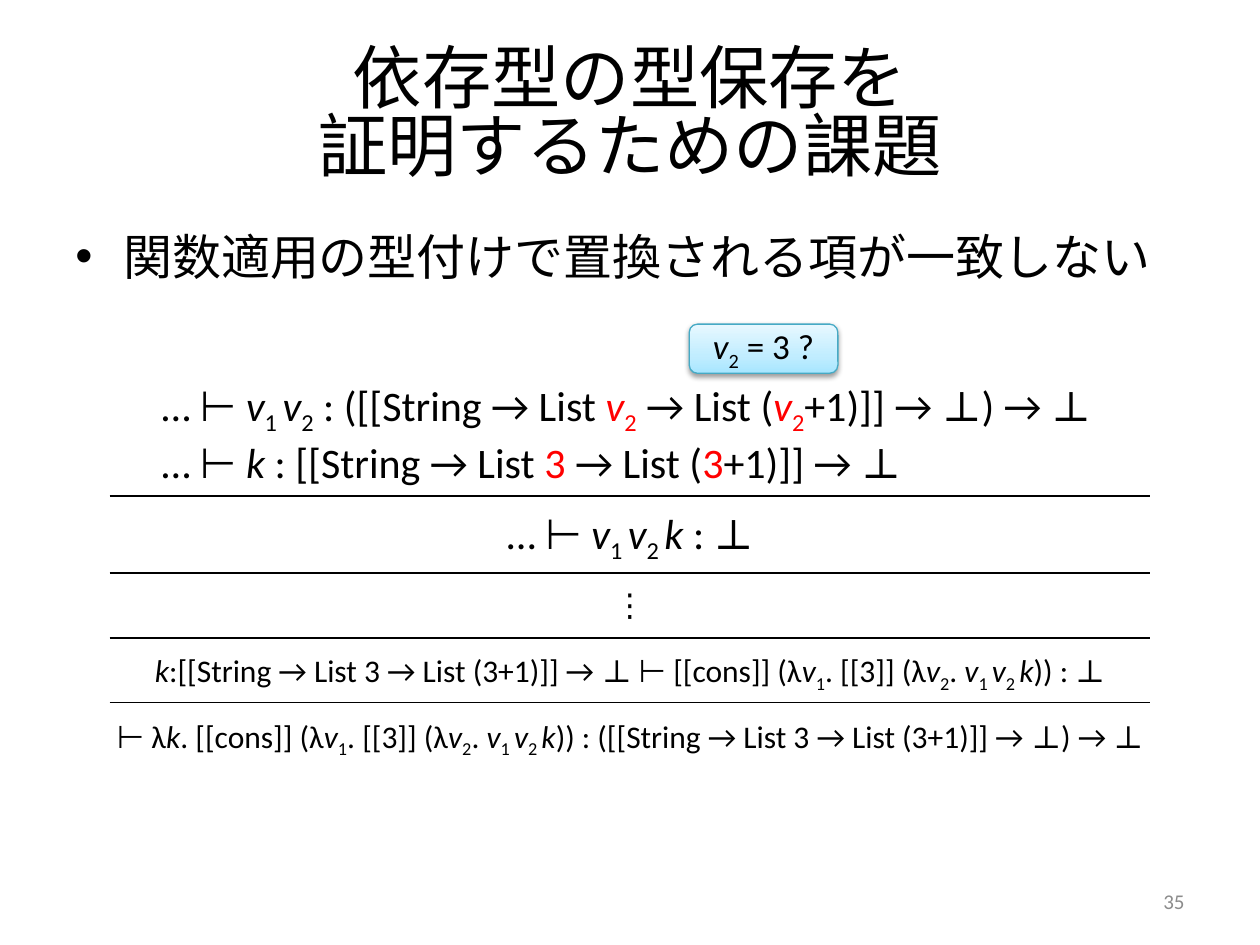
from dataclasses import dataclass
from itertools import groupby

from lxml.etree import SubElement
from pptx import Presentation
from pptx.dml.color import RGBColor as RGB
from pptx.enum.shapes import MSO_CONNECTOR as CONN, MSO_SHAPE as SHAPE
from pptx.enum.text import MSO_ANCHOR as ANCHOR, PP_ALIGN as ALIGN
from pptx.oxml import parse_xml
from pptx.oxml.ns import nsdecls, qn
from pptx.util import Inches, Pt


@dataclass(frozen=True)
class Theme:
    font: str = "Calibri"
    symbol_font: str = "Cambria"
    ink: RGB = RGB(0, 0, 0)
    accent: RGB = RGB(255, 0, 0)
    muted: RGB = RGB(0x8C, 0x8C, 0x8C)
    callout_line: RGB = RGB(0x46, 0xAA, 0xC5)
    callout_stops: tuple = ((0, "A7E6FF"), (35, "C1EDFF"), (100, "E7F8FF"))
    title: float = 39.6
    body: float = 28
    rule: float = 24
    callout: float = 20
    small_rule: float = 18
    number: float = 12


T = Theme()
W, H = Inches(10), Inches(7.5)
MARGIN = 0.05  # share of the slide width

# Judgements: v and k are variables, a digit after v is its index,
# and text between asterisks is highlighted.
PREMISES = ("… ⊢ v1 v2 : ([[String → List *v2* → List (*v2*+1)]] → ⊥) → ⊥",
            "… ⊢ k : [[String → List *3* → List (*3*+1)]] → ⊥")
# (text, size, top, left, width), the last three as shares of the tree's box
STEPS = (
    ("… ⊢ v1 v2 k : ⊥", T.rule, 0.33, 0.01, 0.98),
    ("⋮", T.small_rule, 0.53, 0.4, 0.2),
    ("k:[[String → List 3 → List (3+1)]] → ⊥ ⊢ [[cons]] (λv1. [[3]] (λv2. v1 v2 k)) : ⊥",
     T.small_rule, 0.7, 0, 1),
    ("⊢ λk. [[cons]] (λv1. [[3]] (λv2. v1 v2 k)) : ([[String → List 3 → List (3+1)]] → ⊥) → ⊥",
     T.small_rule, 0.87, -0.025, 1.05),
)
RULE_LINES = (0.316, 0.515, 0.684, 0.85)


def share(box, left, top, width, height):
    x, y, w, h = box
    return tuple(int(v) for v in (x + left * w, y + top * h, width * w, height * h))


def add_run(p, text, size, color=T.ink, font=T.font):
    r = p.add_run()
    r.text = text
    r.font.size, r.font.name = Pt(size), font
    r.font.color.rgb = color
    return r


def judgement_styles(text):
    """Yield each character with its (italic, subscript, symbol, highlighted) style."""
    red = sub = False
    prev = ""
    for i, ch in enumerate(text):
        if ch == "*":
            red = not red
            continue
        sub = (ch.isdigit() and prev == "v") or (
            ch == " " and sub and text[i + 1] in "vk")
        yield ch, (ch in "vk", sub, ch == "⊥", red)
        prev = ch


def add_judgement(p, text, size):
    for style, chars in groupby(judgement_styles(text), key=lambda c: c[1]):
        italic, sub, symbol, red = style
        r = add_run(p, "".join(ch for ch, _ in chars), size,
                    T.accent if red else T.ink, T.symbol_font if symbol else T.font)
        r.font.italic = italic
        if sub:
            r._r.get_or_add_rPr().set("baseline", "-25000")


def add_text_box(slide, box, align=ALIGN.LEFT, anchor=ANCHOR.TOP):
    tf = slide.shapes.add_textbox(*box).text_frame
    tf.word_wrap, tf.vertical_anchor = True, anchor
    tf.paragraphs[0].alignment = align
    return tf


def add_title(slide, box, lines):
    sp = slide.shapes.title
    sp.left, sp.top, sp.width, sp.height = box
    tf = sp.text_frame
    tf.vertical_anchor = ANCHOR.MIDDLE
    p = tf.paragraphs[0]
    p.alignment, p.line_spacing = ALIGN.CENTER, 0.82
    for i, line in enumerate(lines):
        if i:
            p.add_line_break()
        add_run(p, line, T.title)


def add_bullet(slide, box, text):
    p = add_text_box(slide, box).paragraphs[0]
    p.space_before = Pt(0.2 * T.body)
    pPr = p._p.get_or_add_pPr()
    indent = Inches(0.38)
    pPr.set("marL", str(indent))
    pPr.set("indent", str(-indent))
    SubElement(pPr, qn("a:buFont"), typeface="Arial")
    SubElement(pPr, qn("a:buChar"), char="•")
    add_run(p, text, T.body)


def add_rule_line(slide, box, top):
    x, y, w, _ = share(box, 0, top, 1, 0)
    ln = slide.shapes.add_connector(CONN.STRAIGHT, x, y, x + w, y)
    ln.line.color.rgb, ln.line.width = T.ink, Pt(1)
    SubElement(ln._element.spPr, qn("a:effectLst"))


def add_derivation(slide, box):
    tf = add_text_box(slide, share(box, 0.038, 0, 0.924, 0.296))
    for i, premise in enumerate(PREMISES):
        p = tf.add_paragraph() if i else tf.paragraphs[0]
        add_judgement(p, premise, T.rule)
    for text, size, top, left, width in STEPS:
        tf = add_text_box(slide, share(box, left, top, width, 0.13), ALIGN.CENTER)
        add_judgement(tf.paragraphs[0], text, size)
    for top in RULE_LINES:
        add_rule_line(slide, box, top)


def add_callout(slide, box, text):
    sp = slide.shapes.add_shape(SHAPE.ROUNDED_RECTANGLE, *box)
    sp.line.color.rgb, sp.line.width = T.callout_line, Pt(0.75)
    stops = "".join(f'<a:gs pos="{pos * 1000}"><a:srgbClr val="{color}"/></a:gs>'
                    for pos, color in T.callout_stops)
    spPr = sp._element.spPr
    spPr.find(qn("a:ln")).addprevious(parse_xml(
        f'<a:gradFill {nsdecls("a")} rotWithShape="1"><a:gsLst>{stops}</a:gsLst>'
        '<a:lin ang="16200000" scaled="0"/></a:gradFill>'))
    spPr.append(parse_xml(
        f'<a:effectLst {nsdecls("a")}><a:outerShdw blurRad="{Pt(3.1)}" dist="{Pt(1.6)}" '
        'dir="5400000" rotWithShape="0"><a:srgbClr val="000000">'
        '<a:alpha val="38000"/></a:srgbClr></a:outerShdw></a:effectLst>'))
    tf = sp.text_frame
    tf.vertical_anchor = ANCHOR.MIDDLE
    p = tf.paragraphs[0]
    p.alignment = ALIGN.CENTER
    add_judgement(p, text, T.callout)


def add_slide_number(slide, box, number):
    tf = add_text_box(slide, box, ALIGN.RIGHT, ANCHOR.MIDDLE)
    add_run(tf.paragraphs[0], number, T.number, T.muted)


def main():
    prs = Presentation()
    prs.slide_width, prs.slide_height = W, H
    slide = prs.slides.add_slide(prs.slide_layouts[5])
    page = (0, 0, W, H)
    content = 1 - 2 * MARGIN
    add_title(slide, share(page, MARGIN, 0.04, content, 0.167),
              ("依存型の型保存を", "証明するための課題"))
    add_bullet(slide, share(page, MARGIN, 0.233, content, 0.1),
               "関数適用の型付けで置換される項が一致しない")
    add_slide_number(slide, share(page, 0.717, 0.927, 0.233, 0.053), "35")
    add_derivation(slide, share(page, 0.087, 0.395, 0.826, 0.41))
    add_callout(slide, share(page, 0.547, 0.343, 0.118, 0.052), "v2 = 3 ?")
    prs.save("out.pptx")


if __name__ == "__main__":
    main()
